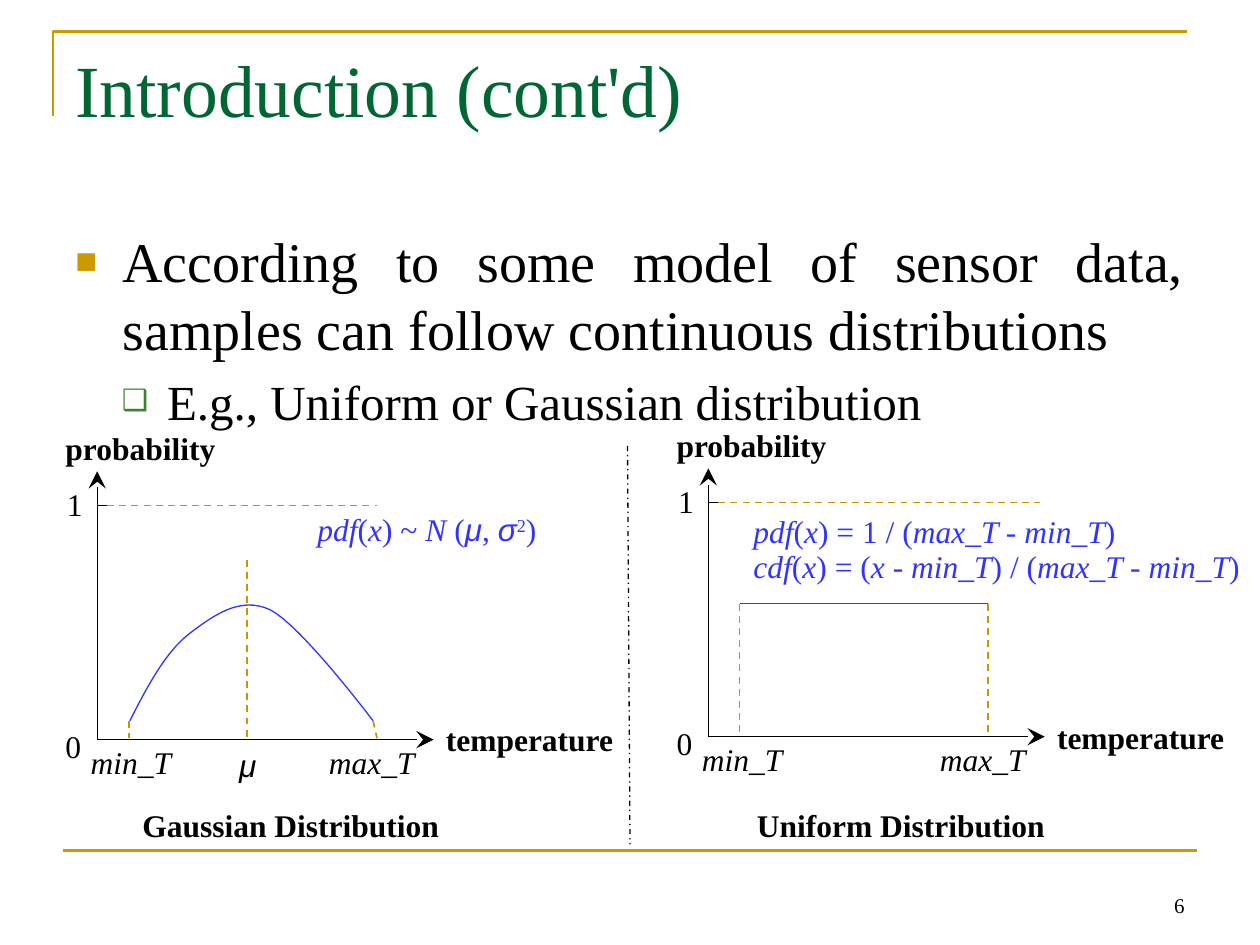
from pptx import Presentation
from pptx.dml.color import RGBColor
from pptx.enum.dml import MSO_LINE
from pptx.enum.shapes import MSO_CONNECTOR
from pptx.enum.text import MSO_ANCHOR, PP_ALIGN
from pptx.oxml.ns import qn
from pptx.util import Cm, Pt
from lxml.etree import SubElement

COLORS = {
    "text": "000000", "title": "006633", "gold": "CC9900",
    "guide": "C89600", "formula": "3333FF", "sub_bullet": "3B812F",
}
SERIF, GREEK_FONT = "Times New Roman", "Arial"
LABEL_HEIGHT = 1.02


def rgb(name):
    return RGBColor.from_string(COLORS[name])


def write(para, text, size=18, color="text", bold=False):
    """Fill a paragraph; *stars* mark italics and ^carets^ superscripts."""
    for i, piece in enumerate(text.split("*")):
        for j, part in enumerate(piece.split("^")):
            if not part:
                continue
            span = para.add_run()
            span.text = part
            font = span.font
            font.size, font.bold, font.italic = Pt(size), bold, i % 2 == 1
            font.name = GREEK_FONT if part in "μσ" else SERIF
            font.color.rgb = rgb(color)
            if j % 2:
                font._element.set("baseline", "30000")


def add_bullet(para, char, color, percent, left, hanging):
    props = para._p.get_or_add_pPr()
    props.set("marL", str(Cm(left)))
    props.set("indent", str(-Cm(hanging)))
    bullet_color = SubElement(props, qn("a:buClr"))
    SubElement(bullet_color, qn("a:srgbClr"), val=COLORS[color])
    SubElement(props, qn("a:buSzPct"), val=str(percent * 1000))
    SubElement(props, qn("a:buFont"), typeface=GREEK_FONT)
    SubElement(props, qn("a:buChar"), char=char)


def bezier(points, steps=16):
    """Sample a chain of cubic curves that share their end points."""
    samples = [points[0]]
    for k in range(0, len(points) - 1, 3):
        a, b, c, d = points[k:k + 4]
        for step in range(1, steps + 1):
            t = step / steps
            u = 1 - t
            samples.append(tuple(
                u**3 * p + 3 * u * u * t * q + 3 * u * t * t * r + t**3 * s
                for p, q, r, s in zip(a, b, c, d)))
    return samples


class Painter:
    """Draws on one page; all lengths are centimetres."""

    def __init__(self, page):
        self.shapes = page.shapes

    def frame(self, x, y, width, height, wrap=True):
        frame = self.shapes.add_textbox(Cm(x), Cm(y), Cm(width), Cm(height)).text_frame
        frame.word_wrap = wrap
        return frame

    def label(self, text, x, y, width, **style):
        frame = self.frame(x, y, width, LABEL_HEIGHT, wrap=False)
        write(frame.paragraphs[0], text, **style)

    def line(self, x1, y1, x2, y2, color="text", width=0.75, dash=None, arrow=False):
        line = self.shapes.add_connector(
            MSO_CONNECTOR.STRAIGHT, Cm(x1), Cm(y1), Cm(x2), Cm(y2))
        line.line.color.rgb = rgb(color)
        line.line.width = Pt(width)
        if dash:
            line.line.dash_style = dash
        if arrow:
            SubElement(line.line._get_or_add_ln(), qn("a:tailEnd"),
                       type="stealth", w="lg", len="lg")
        SubElement(line._element.spPr, qn("a:effectLst"))

    def guide(self, x1, y1, x2, y2):
        self.line(x1, y1, x2, y2, color="guide", width=1, dash=MSO_LINE.DASH)

    def outline(self, points, color, width=0.75):
        points = [(Cm(x), Cm(y)) for x, y in points]
        builder = self.shapes.build_freeform(*points[0])
        builder.add_line_segments(points[1:], close=False)
        shape = builder.convert_to_shape()
        shape.fill.background()
        shape.line.color.rgb = rgb(color)
        shape.line.width = Pt(width)
        shape.shadow.inherit = False

    def axes(self, x, y, guide_end):
        """Axes, tick and labels of a probability plot with origin (x, y)."""
        top = y - 4.72
        self.line(x, y, x + 6.78, y, arrow=True)
        self.line(x, y, x, y - 5.41, arrow=True)
        self.line(x, top, x + 0.33, top)
        self.guide(x + 0.2, top, x + guide_end, top)
        self.label("temperature", x + 6.78, y - 0.51, 3.91, bold=True)
        self.label("probability", x - 0.89, y - 6.38, 3.56, bold=True)
        self.label("*min_T*", x - 0.38, y - 0.05, 2.24)
        self.label("*max_T*", x + 4.42, y - 0.05, 2.26)
        self.label("0", x - 0.89, y - 0.38, 0.84)
        self.label("1", x - 0.86, y - 5.25, 0.84)


def add_frame_and_text(painter):
    painter.outline([(1.07, 2.34), (1.07, 0.64), (23.93, 0.64)], "gold", 1.5)
    painter.line(1.27, 17.15, 24.13, 17.15, color="gold", width=1.5)

    number = painter.frame(18.21, 17.35, 5.92, 1.27)
    number.vertical_anchor = MSO_ANCHOR.BOTTOM
    number.paragraphs[0].alignment = PP_ALIGN.RIGHT
    write(number.paragraphs[0], "6", size=12)

    title = painter.frame(1.27, 0.76, 22.86, 3.18)
    write(title.paragraphs[0], "Introduction (cont'd)", size=42, color="title")

    body = painter.frame(1.27, 4.45, 22.86, 12.57)
    main, detail = body.paragraphs[0], body.add_paragraph()
    detail.level = 1
    detail.space_before = Pt(5.6)
    for para in (main, detail):
        para.alignment = PP_ALIGN.JUSTIFY
    add_bullet(main, "■", "gold", 65, 0.95, 0.95)
    add_bullet(detail, "❑", "sub_bullet", 60, 1.85, 0.91)
    write(main, "According to some model of sensor data, "
                "samples can follow continuous distributions", size=32)
    write(detail, "E.g., Uniform or Gaussian distribution", size=28)


def add_gaussian(painter):
    painter.axes(1.96, 14.91, guide_end=5.64)
    painter.outline(bezier([
        (2.62, 14.53), (2.97, 13.84), (3.33, 13.16), (3.81, 12.78),
        (4.29, 12.42), (4.83, 12.01), (5.44, 12.29),
        (6.07, 12.6), (7.52, 14.53), (7.52, 14.53)]), "formula")
    painter.guide(2.6, 14.53, 2.6, 14.88)
    painter.guide(7.52, 14.53, 7.6, 14.88)
    painter.guide(4.98, 11.28, 4.98, 14.86)
    painter.label("*μ*", 4.57, 14.91, 0.89)
    painter.label("*pdf*(*x*) ~ *N* (*μ*, *σ*^2^)", 6.15, 10.16, 5.21, color="formula")
    painter.label("Gaussian Distribution", 2.62, 16.13, 6.55, bold=True)


def add_uniform(painter):
    painter.axes(14.28, 14.85, guide_end=6.68)
    left, right, top = 14.91, 19.91, 12.17
    painter.line(left, top, right, top, color="formula")
    for x in (left, right):
        painter.guide(x, top, x, 14.81)
    painter.label("*pdf*(*x*) = 1 / (*max_T *- *min_T*)",
                  14.94, 10.19, 7.85, color="formula")
    painter.label("*cdf*(*x*) = (*x *- *min_T*) / (*max_T *- *min_T*)",
                  14.94, 10.9, 10.44, color="formula")
    painter.label("Uniform Distribution", 15.01, 16.13, 6.38, bold=True)


def main():
    deck = Presentation()
    deck.slide_width, deck.slide_height = Cm(25.4), Cm(19.05)
    painter = Painter(deck.slides.add_slide(deck.slide_layouts[6]))
    add_frame_and_text(painter)
    add_gaussian(painter)
    painter.line(12.65, 8.99, 12.7, 17.02, dash=MSO_LINE.DASH_DOT)
    add_uniform(painter)
    deck.save("out.pptx")


if __name__ == "__main__":
    main()
